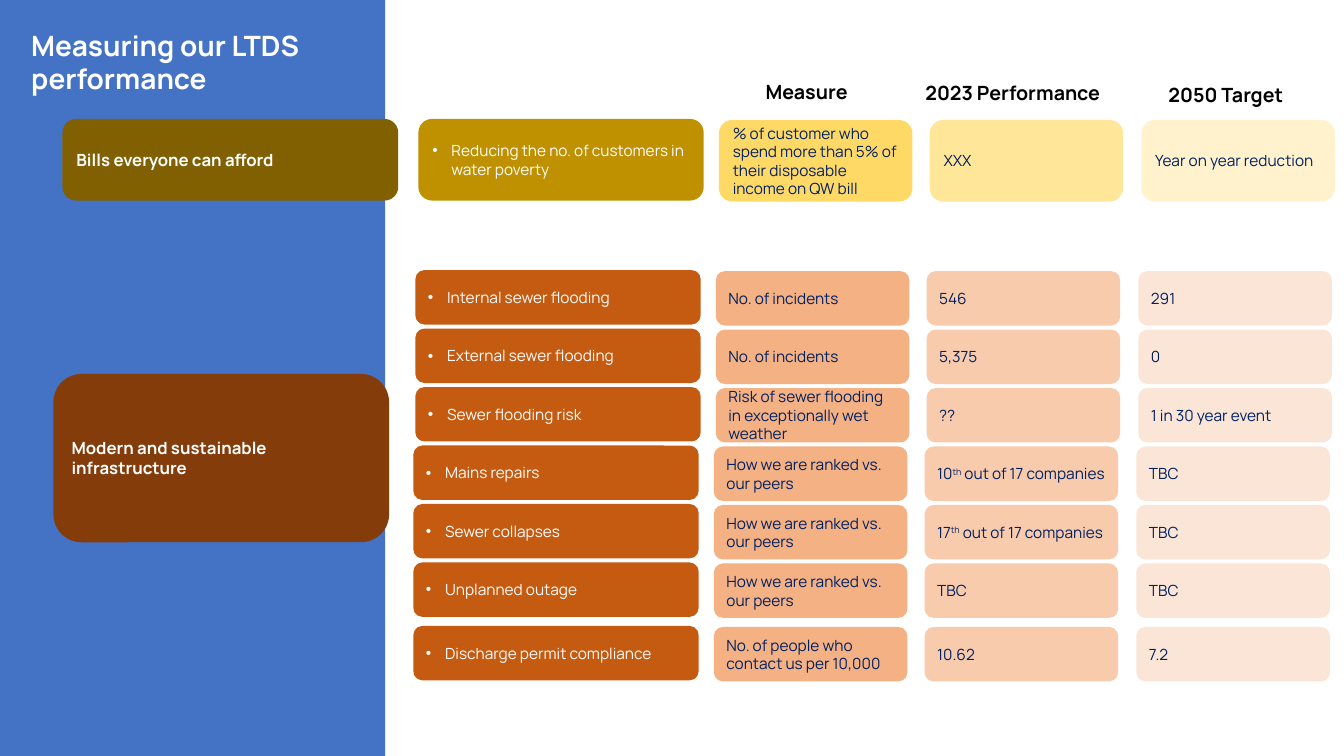
from lxml.etree import SubElement
from pptx import Presentation
from pptx.dml.color import RGBColor as RGB
from pptx.enum.shapes import MSO_SHAPE as SHAPE
from pptx.enum.text import MSO_ANCHOR as ANCHOR, MSO_AUTO_SIZE as AUTO, PP_ALIGN as ALIGN
from pptx.oxml.ns import qn
from pptx.util import Inches, Pt

COLORS = {
    "panel": "4472C4", "white": "FFFFFF", "black": "000000", "navy": "002060",
    "bills": "806000", "infrastructure": "843C0B",
}
GOLDS = ["BF9000", "FFD966", "FFE699", "FFF2CC"]
ORANGES = ["C55A11", "F4B183", "F8CBAD", "FBE5D6"]
COLUMN_OFFSETS = [0, 2.98, 5.07, 7.17]
COLUMN_WIDTHS = [2.83, 1.92, 1.92, 1.92]
ROW_H, ROW_PITCH = 0.54, 0.58


def write(tf, text, size, color, bold=False, align=ALIGN.LEFT):
    """Fill a text frame; parts between ^ marks become superscript."""
    tf.word_wrap = True
    p = tf.paragraphs[0]
    p.alignment = align
    for i, part in enumerate(text.split("^")):
        r = p.add_run()
        r.text = part
        for name, value in {"name": "Manrope", "size": Pt(size), "bold": bold}.items():
            setattr(r.font, name, value)
        r.font.color.rgb = RGB.from_string(COLORS[color])
        if i % 2:
            r._r.get_or_add_rPr().set("baseline", "30000")
    return p


def add_box(kind, x, y, w, h, fill):
    sp = s.shapes.add_shape(kind, Inches(x), Inches(y), Inches(w), Inches(h))
    sp.shadow.inherit = False
    sp.fill.solid()
    sp.fill.fore_color.rgb = RGB.from_string(fill)
    sp.line.fill.background()
    sp.text_frame.vertical_anchor = ANCHOR.MIDDLE
    return sp


prs = Presentation()
prs.slide_width, prs.slide_height = Inches(13.33), Inches(7.5)
s = prs.slides.add_slide(prs.slide_layouts[5])

# Side panel with the title in front of it
panel = add_box(SHAPE.RECTANGLE, 0, 0, 3.82, 7.5, COLORS["panel"])
title = s.shapes.title
panel._element.addnext(title._element)
title.left, title.top = Inches(0.21), Inches(0.23)
title.width, title.height = Inches(3.33), Inches(0.77)
title.text_frame.auto_size = AUTO.NONE
title.text_frame.vertical_anchor = ANCHOR.TOP
write(title.text_frame, "Measuring our LTDS performance", 20, "white", bold=True)

# Outcome groups
for text, x, y, h, color in [
    ("Bills everyone can afford", 0.62, 1.18, 0.81, "bills"),
    ("Modern and sustainable infrastructure", 0.53, 3.71, 1.67, "infrastructure"),
]:
    sp = add_box(SHAPE.ROUNDED_RECTANGLE, x, y, 3.33, h, COLORS[color])
    write(sp.text_frame, text, 12, "white", bold=True)

# Column headings
for text, x, y, w, align in [
    ("Measure", 7.09, 0.74, 1.82, ALIGN.CENTER),
    ("2023 Performance", 9.08, 0.75, 2.13, ALIGN.LEFT),
    ("2050 Target", 11.49, 0.77, 1.78, ALIGN.LEFT),
]:
    sp = s.shapes.add_textbox(Inches(x), Inches(y), Inches(w), Inches(0.34))
    write(sp.text_frame, text, 14, "black", bold=True, align=align)

# Measures: left edge, top, height, colours, then the four cells
infrastructure = [
    (4.12, "Internal sewer flooding", "No. of incidents", "546", "291"),
    (4.12, "External sewer flooding", "No. of incidents", "5,375", "0"),
    (4.12, "Sewer flooding risk", "Risk of sewer flooding in exceptionally wet weather",
     "??", "1 in 30 year event"),
    (4.1, "Mains repairs", "How we are ranked vs. our peers",
     "10^th^ out of 17 companies", "TBC"),
    (4.1, "Sewer collapses", "How we are ranked vs. our peers",
     "17^th^ out of 17 companies", "TBC"),
    (4.1, "Unplanned outage", "How we are ranked vs. our peers", "TBC", "TBC"),
]
rows = [(4.15, 1.18, 0.81, GOLDS, [
    "Reducing the no. of customers in water poverty",
    "% of customer who spend more than 5% of their disposable income on QW bill",
    "XXX", "Year on year reduction"])]
for i, (x, *cells) in enumerate(infrastructure):
    rows.append((x, 2.68 + i * ROW_PITCH, ROW_H, ORANGES, cells))
rows.append((4.1, 6.21, ROW_H, ORANGES, [
    "Discharge permit compliance", "No. of people who contact us per 10,000",
    "10.62", "7.2"]))

for x, y, h, fills, cells in rows:
    for col, (text, fill) in enumerate(zip(cells, fills)):
        top = y + 0.01 if col else y
        sp = add_box(SHAPE.ROUNDED_RECTANGLE, x + COLUMN_OFFSETS[col], top,
                     COLUMN_WIDTHS[col], h, fill)
        p = write(sp.text_frame, text, 11, "navy" if col else "white")
        if col == 0:
            pPr = p._p.get_or_add_pPr()
            pPr.set("marL", str(Inches(0.19)))
            pPr.set("indent", str(-Inches(0.19)))
            SubElement(pPr, qn("a:buFont")).set("typeface", "Arial")
            SubElement(pPr, qn("a:buChar")).set("char", "•")

prs.save("out.pptx")
